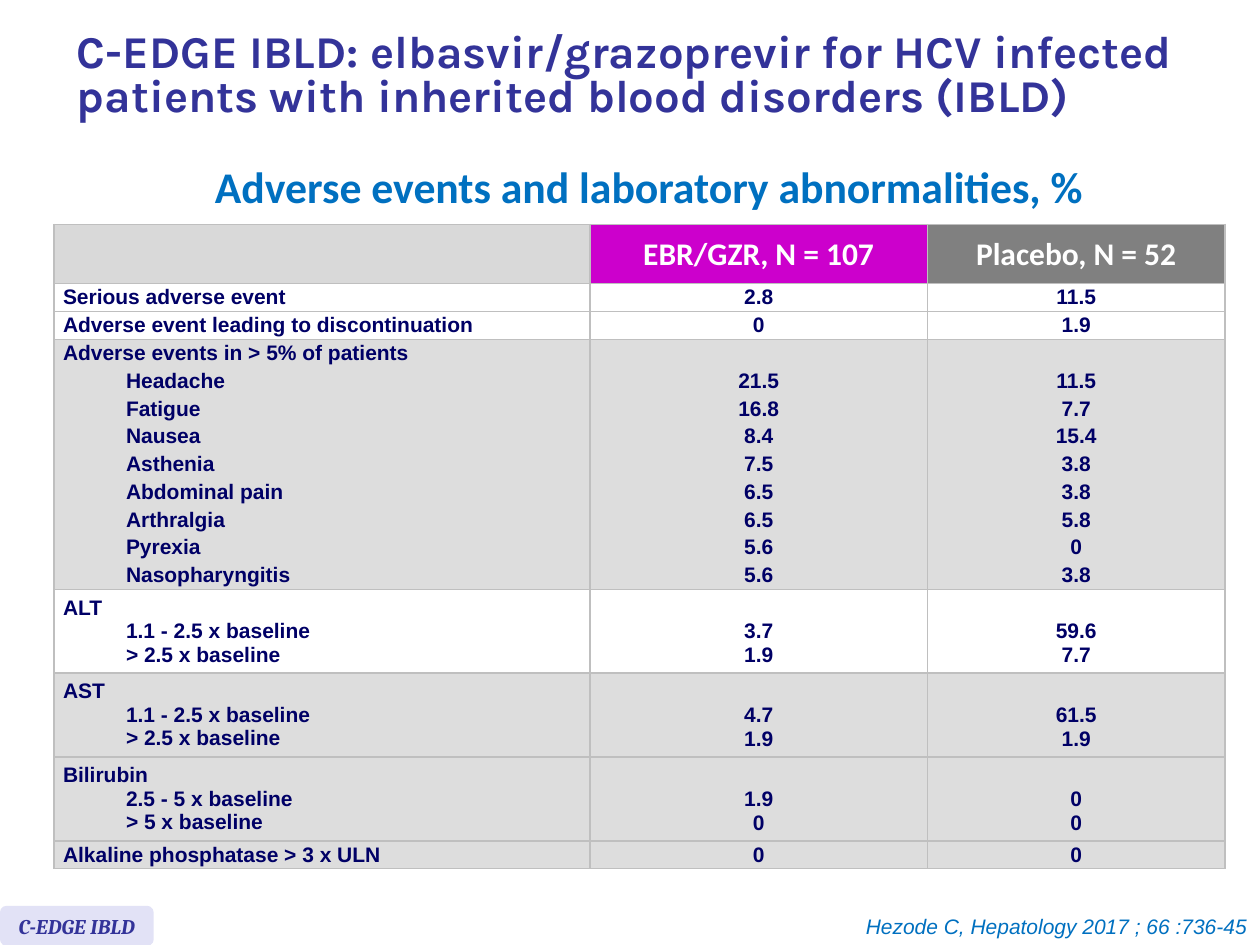
from dataclasses import dataclass

from lxml.etree import SubElement
from pptx import Presentation
from pptx.dml.color import RGBColor
from pptx.enum.shapes import MSO_SHAPE
from pptx.enum.text import MSO_ANCHOR, PP_ALIGN
from pptx.oxml import parse_xml
from pptx.oxml.ns import nsdecls, qn
from pptx.util import Cm, Pt

WHITE = RGBColor(0xFF, 0xFF, 0xFF)
SILVER = RGBColor(0xDD, 0xDD, 0xDD)
PALE = RGBColor(0xD9, 0xD9, 0xD9)
GRAY = RGBColor(0x80, 0x80, 0x80)
RULE = RGBColor(0xBF, 0xBF, 0xBF)
MAGENTA = RGBColor(0xCC, 0x00, 0xCC)
NAVY = RGBColor(0x00, 0x00, 0x66)
INDIGO = RGBColor(0x33, 0x33, 0x99)
BLUE = RGBColor(0x00, 0x70, 0xC0)
LILAC = RGBColor(0xE2, 0xE2, 0xF6)

COLUMNS = (10.8, 6.81, 5.99)
HEADER_HEIGHT = 1.19
ROW_HEIGHT = 0.56
GROUP_HEIGHT = 1.69
LINE = 0.49


@dataclass(frozen=True)
class Style:
    font: str
    size: int
    color: RGBColor
    bold: bool = True
    italic: bool = False
    align: PP_ALIGN = PP_ALIGN.CENTER
    spacing: float | None = None


@dataclass(frozen=True)
class Label:
    text: str
    box: tuple[float, float, float, float]
    style: Style
    wrap: bool = False
    anchor: MSO_ANCHOR = MSO_ANCHOR.TOP
    fill: RGBColor | None = None


@dataclass(frozen=True)
class Row:
    labels: tuple[str, ...]
    treated: tuple[str, ...]
    placebo: tuple[str, ...]
    fill: RGBColor = SILVER
    indent: bool = False
    edges: str = "LRTB"


HEADER = Style("Calibri", 18, WHITE)
VALUE = Style("Arial", 12, NAVY)
NAME = Style("Arial", 12, NAVY, align=PP_ALIGN.LEFT)

LABELS = (
    Label("Adverse events and laboratory abnormalities, %", (3.81, 3.33, 18.54, 1.14),
          Style("Calibri", 25, BLUE, spacing=23.6)),
    Label("C-EDGE IBLD: elbasvir/grazoprevir for HCV infected patients with "
          "inherited blood disorders (IBLD)", (1.3, 0.2, 23.19, 2.72),
          Style("Karla", 26, INDIGO, align=PP_ALIGN.LEFT, spacing=25),
          wrap=True, anchor=MSO_ANCHOR.MIDDLE),
    Label("C-EDGE IBLD", (0, 18.26, 3.1, 0.81), Style("Cambria", 12, INDIGO, italic=True),
          anchor=MSO_ANCHOR.MIDDLE, fill=LILAC),
    Label("Hezode C, Hepatology 2017 ; 66 :736-45", (17.15, 18.29, 8.25, 0.76),
          Style("Arial", 12, BLUE, bold=False, italic=True, align=PP_ALIGN.RIGHT)),
)

EVENTS = (
    ("Headache", "21.5", "11.5"),
    ("Fatigue", "16.8", "7.7"),
    ("Nausea", "8.4", "15.4"),
    ("Asthenia", "7.5", "3.8"),
    ("Abdominal pain", "6.5", "3.8"),
    ("Arthralgia", "6.5", "5.8"),
    ("Pyrexia", "5.6", "0"),
    ("Nasopharyngitis", "5.6", "3.8"),
)

ROWS = (
    Row(("Serious adverse event",), ("2.8",), ("11.5",), WHITE),
    Row(("Adverse event leading to discontinuation",), ("0",), ("1.9",), WHITE),
    Row(("Adverse events in > 5% of patients",), (), (), edges="LRT"),
    *(Row((name,), (treated,), (placebo,), indent=True,
          edges="LRB" if name == EVENTS[-1][0] else "LR")
      for name, treated, placebo in EVENTS),
    Row(("ALT", "1.1 - 2.5 x baseline", "> 2.5 x baseline"), ("3.7", "1.9"), ("59.6", "7.7"), WHITE),
    Row(("AST", "1.1 - 2.5 x baseline", "> 2.5 x baseline"), ("4.7", "1.9"), ("61.5", "1.9")),
    Row(("Bilirubin", "2.5 - 5 x baseline", "> 5 x baseline"), ("1.9", "0"), ("0", "0")),
    Row(("Alkaline phosphatase > 3 x ULN",), ("0",), ("0",)),
)


def style_paragraph(p, style: Style) -> None:
    """Apply a text style to one paragraph."""
    p.alignment = style.align
    if style.spacing:
        p.line_spacing = Pt(style.spacing)
    f = p.font
    f.name, f.size, f.bold, f.italic = style.font, Pt(style.size), style.bold, style.italic
    f.color.rgb = style.color


def draw_label(slide, label: Label) -> None:
    """Draw a text box, or a rounded badge when the label has a fill."""
    box = [Cm(v) for v in label.box]
    if label.fill is None:
        s = slide.shapes.add_textbox(*box)
    else:
        s = slide.shapes.add_shape(MSO_SHAPE.ROUNDED_RECTANGLE, *box)
        s.shadow.inherit = False
        s.fill.solid()
        s.fill.fore_color.rgb = label.fill
        s.line.fill.background()
    tf = s.text_frame
    tf.word_wrap = label.wrap
    tf.vertical_anchor = label.anchor
    p = tf.paragraphs[0]
    p.text = label.text
    style_paragraph(p, label.style)


def set_borders(cell, edges: str) -> None:
    """Rule the named edges of a cell and clear the others."""
    tc_pr = cell._tc.get_or_add_tcPr()
    for i, edge in enumerate("LRTB"):
        paint = f'<a:solidFill><a:srgbClr val="{RULE}"/></a:solidFill>' if edge in edges else "<a:noFill/>"
        tc_pr.insert(i, parse_xml(f'<a:ln{edge} {nsdecls("a")} w="{Pt(1)}">{paint}</a:ln{edge}>'))


def fill_cell(cell, lines: tuple[str, ...], style: Style, fill: RGBColor,
              margin: float = 0.18, top: float = 0, edges: str = "LRTB") -> None:
    """Write lines into a cell and set its fill, margins and borders."""
    cell.fill.solid()
    cell.fill.fore_color.rgb = fill
    set_borders(cell, edges)
    cell.vertical_anchor = MSO_ANCHOR.MIDDLE
    cell.margin_left = cell.margin_right = Cm(margin)
    cell.margin_top, cell.margin_bottom = Cm(top), 0
    tf = cell.text_frame
    tf.text = "\n".join(lines)
    for p in tf.paragraphs:
        style_paragraph(p, style)
    if not lines:
        SubElement(tf.paragraphs[0]._p, qn("a:endParaRPr")).set("sz", str(style.size * 100))


def draw_table(slide) -> None:
    """Draw the adverse event table."""
    heights = [HEADER_HEIGHT] + [GROUP_HEIGHT if len(r.labels) > 1 else ROW_HEIGHT for r in ROWS]
    table = slide.shapes.add_table(len(heights), len(COLUMNS), Cm(1.09), Cm(4.53),
                                   Cm(sum(COLUMNS)), Cm(sum(heights))).table
    for column, width in zip(table.columns, COLUMNS):
        column.width = Cm(width)
    for row, height in zip(table.rows, heights):
        row.height = Cm(height)
    headers = (((), PALE), (("EBR/GZR, N = 107",), MAGENTA), (("Placebo, N = 52",), GRAY))
    for i, (lines, fill) in enumerate(headers):
        fill_cell(table.cell(0, i), lines, HEADER, fill, margin=0.25)
    for i, row in enumerate(ROWS, 1):
        name = table.cell(i, 0)
        fill_cell(name, row.labels, NAME, row.fill, edges=row.edges)
        for p in name.text_frame.paragraphs[0 if row.indent else 1:]:
            p.level = 1
            p._p.get_or_add_pPr().set("marL", str(Cm(1.27)))
            p._p.get_or_add_pPr().set("indent", "0")
        top = LINE if len(row.labels) > 1 else 0
        for j, lines in enumerate((row.treated, row.placebo), 1):
            fill_cell(table.cell(i, j), lines, VALUE, row.fill, top=top, edges=row.edges)


def main() -> None:
    """Build and save the slide."""
    prs = Presentation()
    prs.slide_width, prs.slide_height = Cm(25.4), Cm(19.05)
    slide = prs.slides.add_slide(prs.slide_layouts[6])
    draw_table(slide)
    for label in LABELS:
        draw_label(slide, label)
    prs.save("out.pptx")


if __name__ == "__main__":
    main()
